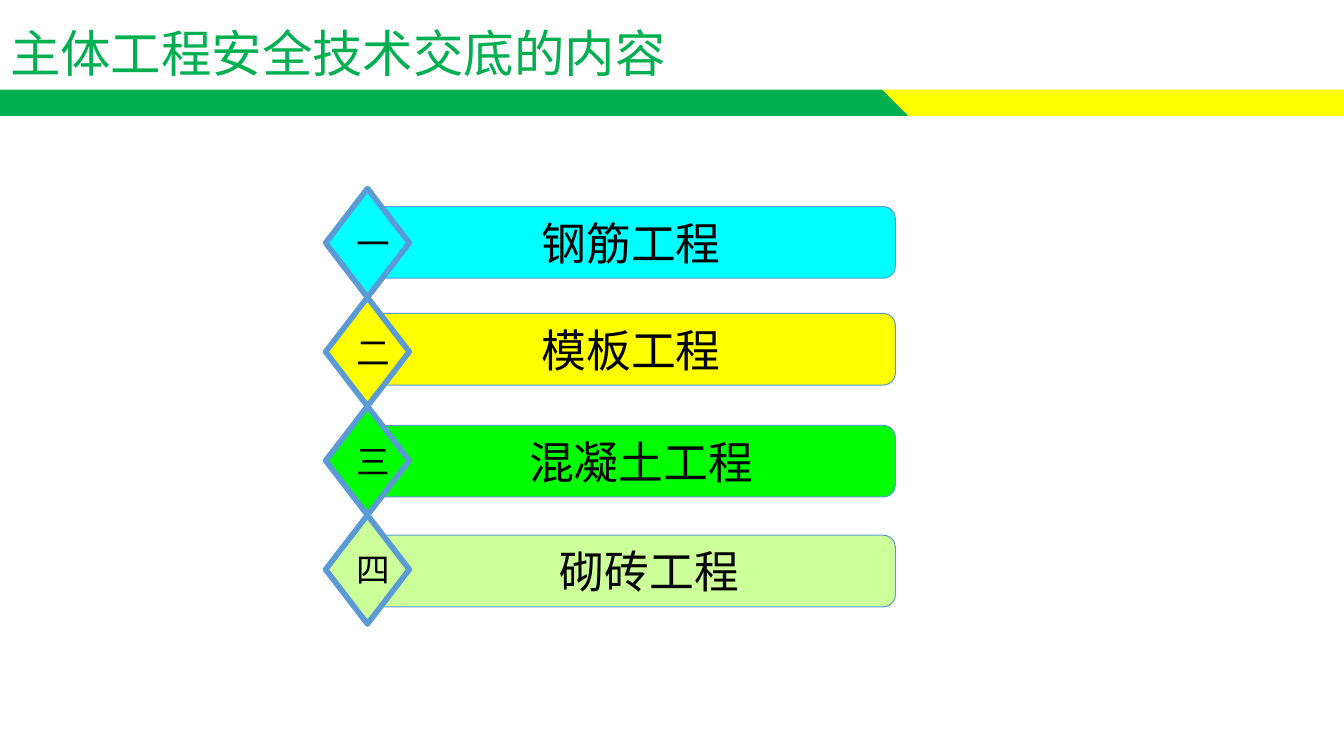
from pptx import Presentation
from pptx.dml.color import RGBColor
from pptx.enum.shapes import MSO_SHAPE
from pptx.enum.text import MSO_ANCHOR, PP_ALIGN
from pptx.util import Inches, Pt
from lxml.etree import SubElement
from pptx.oxml.ns import qn

COLORS = {
    "green": "00B050", "yellow": "FFFF00", "cyan": "00FFFF", "lime": "00FF00",
    "pale": "CCFF99", "outline": "5B9BD5", "black": "000000",
}


class Deck:
    def __init__(self):
        self.prs = Presentation()
        self.prs.slide_width, self.prs.slide_height = Inches(13.33), Inches(7.5)
        self.s = self.prs.slides.add_slide(self.prs.slide_layouts[5])

    def color(self, name):
        return RGBColor.from_string(COLORS[name])

    def add_text(self, sp, text, size, font, color, align, anchor, wrap):
        tf = sp.text_frame
        tf.word_wrap = wrap
        tf.vertical_anchor = anchor
        p = tf.paragraphs[0]
        p.alignment = align
        r = p.add_run()
        r.text = text
        r.font.size = Pt(size)
        r.font.name = font
        r.font.color.rgb = self.color(color)
        return r

    def title(self, text, x, y, w, h):
        sp = self.s.shapes.title
        sp.left, sp.top, sp.width, sp.height = map(Inches, (x, y, w, h))
        font = "Noto Sans CJK SC"
        r = self.add_text(sp, text, 36, font, "green", PP_ALIGN.LEFT, MSO_ANCHOR.TOP, False)
        SubElement(r._r.get_or_add_rPr(), qn("a:ea")).set("typeface", font)

    def band(self, points, fill):
        pts = [(Inches(x), Inches(y)) for x, y in points]
        fb = self.s.shapes.build_freeform(*pts[0])
        fb.add_line_segments(pts[1:], close=True)
        sp = fb.convert_to_shape()
        sp.shadow.inherit = False
        sp.fill.solid()
        sp.fill.fore_color.rgb = self.color(fill)
        sp.line.fill.background()

    def shape(self, kind, x, y, w, h, fill, line_width):
        sp = self.s.shapes.add_shape(kind, *map(Inches, (x, y, w, h)))
        sp.shadow.inherit = False
        sp.fill.solid()
        sp.fill.fore_color.rgb = self.color(fill)
        sp.line.color.rgb = self.color("outline")
        sp.line.width = Pt(line_width)
        return sp

    def bar(self, text, y, fill, indent):
        sp = self.shape(MSO_SHAPE.ROUNDED_RECTANGLE, 3.64, y, 5.24, 0.71, fill, 0.75)
        sp.text_frame.margin_left = Inches(0.1 + indent)
        self.add_text(sp, text, 32, "Calibri", "black", PP_ALIGN.CENTER, MSO_ANCHOR.MIDDLE, True)

    def diamond(self, text, y, fill):
        sp = self.shape(MSO_SHAPE.DIAMOND, 3.23, y, 0.83, 1.08, fill, 4)
        self.add_text(sp, text, 24, "Calibri", "black", PP_ALIGN.LEFT, MSO_ANCHOR.MIDDLE, False)


def main():
    deck = Deck()
    top, bottom = 0.89, 1.15
    deck.band([(0, top), (8.75, top), (9.01, bottom), (0, bottom)], "green")
    deck.band([(8.75, top), (13.33, top), (13.33, bottom), (9.01, bottom)], "yellow")
    deck.title("主体工程安全技术交底的内容", 0, 0.17, 6.77, 0.71)
    items = [
        ("一", "钢筋工程", 2.05, "cyan", 0),
        ("二", "模板工程", 3.11, "yellow", 0),
        ("三", "混凝土工程", 4.22, "lime", 0.2),
        ("四", "砌砖工程", 5.31, "pale", 0.36),
    ]
    for i, (number, text, y, fill, indent) in enumerate(items):
        deck.bar(text, y, fill, indent)
        deck.diamond(number, 1.87 + i * 1.08, fill)
    deck.prs.save("out.pptx")


if __name__ == "__main__":
    main()
